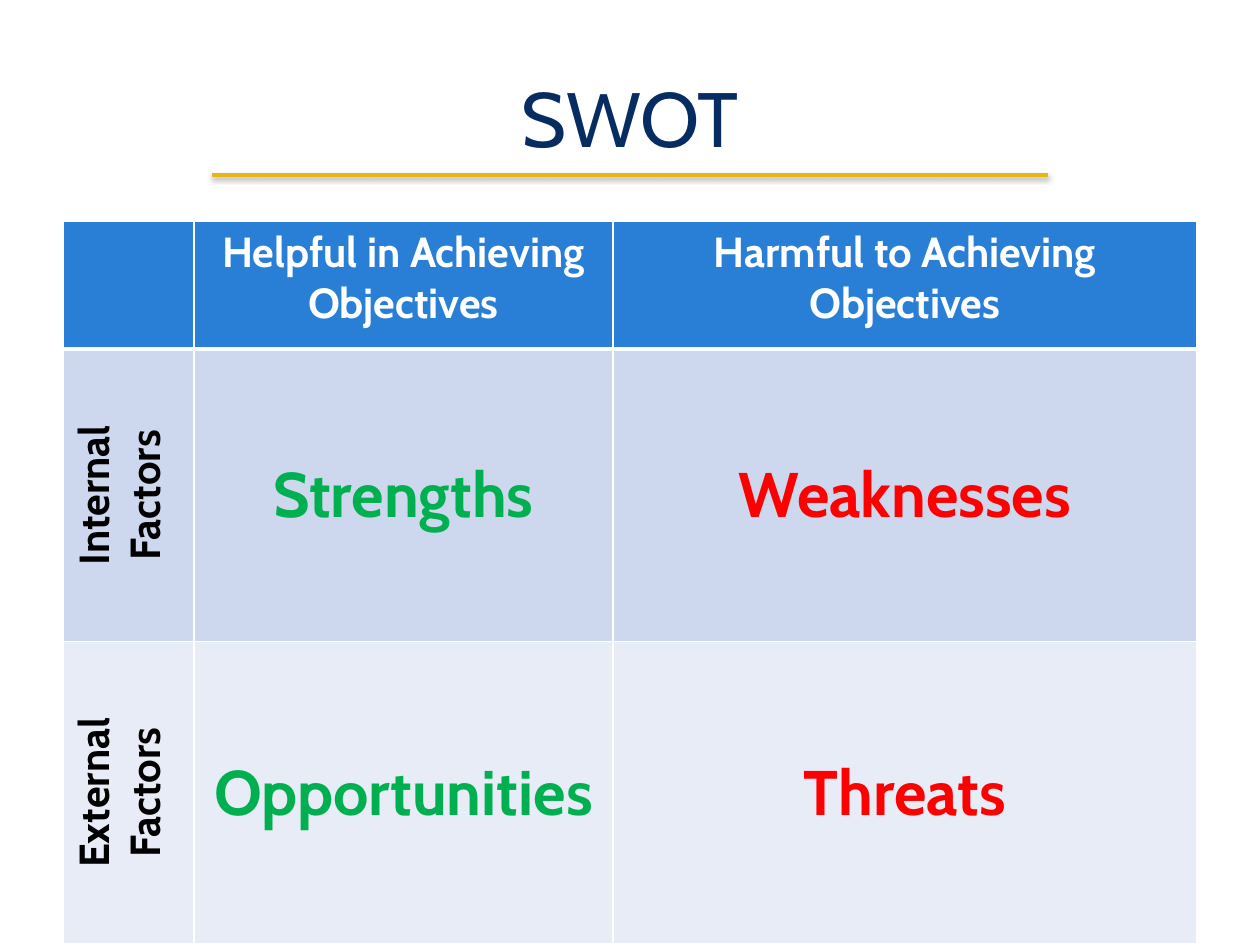
from lxml.etree import SubElement
from pptx import Presentation
from pptx.dml.color import RGBColor
from pptx.enum.shapes import MSO_CONNECTOR
from pptx.enum.text import MSO_ANCHOR, PP_ALIGN
from pptx.oxml import parse_xml
from pptx.oxml.ns import nsdecls, qn
from pptx.util import Pt

PX = 914400 // 126  # EMU per pixel
FONT = "Cabin"
NAVY = RGBColor(0x07, 0x2C, 0x62)
GOLD = RGBColor(0xE7, 0xB6, 0x17)
BLUE = RGBColor(0x29, 0x7F, 0xD5)
MID = RGBColor(0xCD, 0xD8, 0xEF)
PALE = RGBColor(0xE8, 0xEC, 0xF7)
WHITE = RGBColor(0xFF, 0xFF, 0xFF)
BLACK = RGBColor(0, 0, 0)
GREEN = RGBColor(0, 0xB0, 0x50)
RED = RGBColor(0xFF, 0, 0)


def write(frame, text, size=24, color=BLACK, bold=True):
    par = frame.paragraphs[0]
    par.alignment = PP_ALIGN.CENTER
    run = par.add_run()
    run.text = text
    font = run.font
    font.name, font.size, font.bold = FONT, Pt(size), bold
    font.color.rgb = color


class Deck:
    def __init__(self):
        self.prs = Presentation()
        self.prs.slide_width = 1260 * PX
        self.prs.slide_height = 945 * PX
        self.slide = self.prs.slides.add_slide(self.prs.slide_layouts[6])

    def rule(self, x1, x2, y, color, width):
        line = self.slide.shapes.add_connector(
            MSO_CONNECTOR.STRAIGHT, x1 * PX, y * PX, x2 * PX, y * PX)
        line.line.color.rgb = color
        line.line.width = Pt(width)
        # Soft shadow below the line
        line._element.spPr.append(parse_xml(
            f'<a:effectLst {nsdecls("a")}>'
            f'<a:outerShdw blurRad="{Pt(3.1)}" dist="{Pt(1.6)}" dir="5400000"'
            ' rotWithShape="0"><a:srgbClr val="000000">'
            '<a:alpha val="38000"/></a:srgbClr></a:outerShdw></a:effectLst>'))

    def text(self, x, y, w, h, text, **form):
        box = self.slide.shapes.add_textbox(x * PX, y * PX, w * PX, h * PX)
        frame = box.text_frame
        frame.word_wrap = True
        frame.vertical_anchor = MSO_ANCHOR.MIDDLE
        write(frame, text, **form)

    def grid(self, x, y, cols, rows):
        table = self.slide.shapes.add_table(
            len(rows), len(cols), x * PX, y * PX,
            sum(cols) * PX, sum(rows) * PX).table
        for col, w in zip(table.columns, cols):
            col.width = w * PX
        for row, h in zip(table.rows, rows):
            row.height = h * PX
        return table

    def cell(self, cell, fill, top=1, low=1, turn=False, mid=False):
        props = cell._tc.get_or_add_tcPr()
        for side, width in zip("LRTB", (1, 1, top, low)):
            edge = SubElement(props, qn(f"a:ln{side}"), w=str(Pt(width)))
            paint = SubElement(edge, qn("a:solidFill"))
            SubElement(paint, qn("a:srgbClr"), val=str(WHITE))
        cell.fill.solid()
        cell.fill.fore_color.rgb = fill
        if turn:
            props.set("vert", "vert270")
        if mid:
            cell.vertical_anchor = MSO_ANCHOR.MIDDLE


def main():
    deck = Deck()

    # Title
    deck.rule(212, 1048, 175, GOLD, 2)
    deck.text(63, 38, 1134, 157, "SWOT", size=44, color=NAVY, bold=False)

    # SWOT table
    table = deck.grid(63, 221, (131, 419, 584), (128, 222, 222))
    heads = ("", "Helpful in Achieving Objectives",
             "Harmful to Achieving Objectives")
    for c, head in enumerate(heads):
        cell = table.cell(0, c)
        deck.cell(cell, BLUE, low=3)
        if head:
            write(cell.text_frame, head, color=WHITE)

    body = ((MID, 3, "Internal Factors", "Strengths", "Weaknesses"),
            (PALE, 1, "External Factors", "Opportunities", "Threats"))
    for r, (fill, top, label, good, bad) in enumerate(body, 1):
        side = table.cell(r, 0)
        deck.cell(side, fill, top=top, turn=True)
        write(side.text_frame, label)
        for c, (word, color) in enumerate(((good, GREEN), (bad, RED)), 1):
            cell = table.cell(r, c)
            deck.cell(cell, fill, top=top, mid=True)
            write(cell.text_frame, word, size=36, color=color)

    deck.prs.save("out.pptx")


if __name__ == "__main__":
    main()
